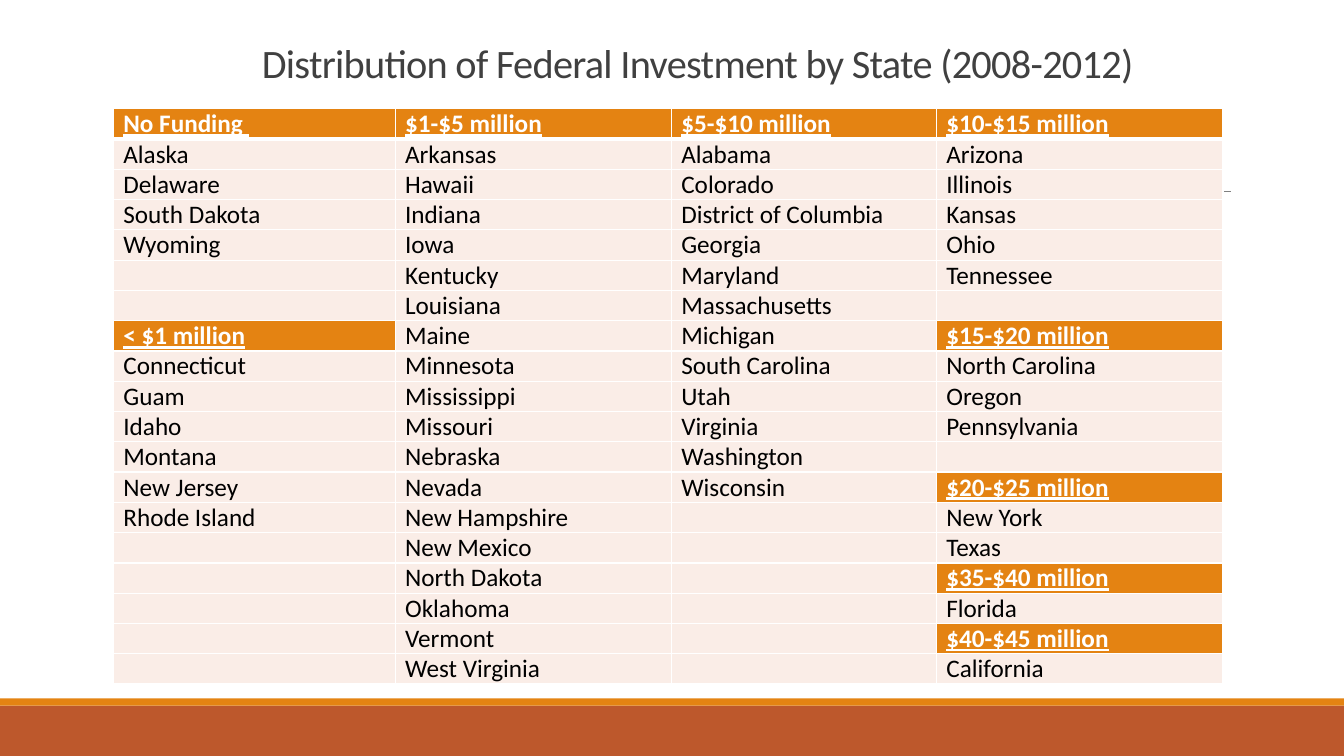
from lxml import etree
from pptx import Presentation
from pptx import util as u
from pptx.dml.color import RGBColor
from pptx.enum import shapes, text
from pptx.oxml import ns

WHITE = RGBColor(0xFF, 0xFF, 0xFF)
BLACK = RGBColor(0x00, 0x00, 0x00)
CHARCOAL = RGBColor(0x40, 0x40, 0x40)
GRAY = RGBColor(0x80, 0x80, 0x80)
ORANGE = RGBColor(0xE4, 0x83, 0x12)
RUST = RGBColor(0xBD, 0x58, 0x2C)
BLUSH = RGBColor(0xFA, 0xED, 0xE7)

PAGE_WIDTH, PAGE_HEIGHT = 33.87, 19.05
COLUMN_WIDTHS = [7.1, 6.96, 6.68, 7.22]
ROW_HEIGHT = 0.76
ROW_COUNT = 19

COLUMNS = [
    ["No Funding ", "Alaska", "Delaware", "South Dakota", "Wyoming", "", "",
     "< $1 million", "Connecticut", "Guam", "Idaho", "Montana", "New Jersey",
     "Rhode Island"],
    ["$1-$5 million", "Arkansas", "Hawaii", "Indiana", "Iowa", "Kentucky",
     "Louisiana", "Maine", "Minnesota", "Mississippi", "Missouri", "Nebraska",
     "Nevada", "New Hampshire", "New Mexico", "North Dakota", "Oklahoma",
     "Vermont", "West Virginia"],
    ["$5-$10 million", "Alabama", "Colorado", "District of Columbia", "Georgia",
     "Maryland", "Massachusetts", "Michigan", "South Carolina", "Utah",
     "Virginia", "Washington", "Wisconsin"],
    ["$10-$15 million", "Arizona", "Illinois", "Kansas", "Ohio", "Tennessee", "",
     "$15-$20 million", "North Carolina", "Oregon", "Pennsylvania", "",
     "$20-$25 million", "New York", "Texas", "$35-$40 million", "Florida",
     "$40-$45 million", "California"],
]


class FundingSlide:
    font_name = "Calibri"

    def __init__(self, page):
        self.page = page

    def style(self, para, size, color, heading=False):
        for span in para.runs:
            font = span.font
            font.name = self.font_name
            font.size = u.Pt(size)
            font.color.rgb = color
            font.bold = heading
            font.underline = heading

    def band(self, top, height, color):
        box = self.page.shapes.add_shape(
            shapes.MSO_SHAPE.RECTANGLE,
            0, u.Cm(top), u.Cm(PAGE_WIDTH), u.Cm(height))
        box.shadow.inherit = False
        box.fill.solid()
        box.fill.fore_color.rgb = color
        box.line.fill.background()

    def rule(self, left, right, top):
        line = self.page.shapes.add_connector(
            shapes.MSO_CONNECTOR.STRAIGHT,
            u.Cm(left), u.Cm(top), u.Cm(right), u.Cm(top))
        line.line.color.rgb = GRAY
        line.line.width = u.Pt(0.5)
        etree.SubElement(line._element.spPr, ns.qn("a:effectLst"))

    def title(self, wording, left, top, width, height):
        box = self.page.shapes.add_textbox(
            u.Cm(left), u.Cm(top), u.Cm(width), u.Cm(height))
        frame = box.text_frame
        frame.word_wrap = True
        frame.vertical_anchor = text.MSO_ANCHOR.BOTTOM
        frame.text = wording
        para = frame.paragraphs[0]
        para.line_spacing = 0.85
        self.style(para, 28.8, CHARCOAL)
        para.runs[0].font._element.set("spc", "-50")

    def borders(self, cell, row):
        properties = cell._tc.get_or_add_tcPr()
        widths = {"L": 1, "R": 1,
                  "T": 3 if row == 1 else 1, "B": 3 if row == 0 else 1}
        for side, width in widths.items():
            line = etree.SubElement(properties, ns.qn(f"a:ln{side}"), w=str(u.Pt(width)))
            fill = etree.SubElement(line, ns.qn("a:solidFill"))
            etree.SubElement(fill, ns.qn("a:srgbClr"), val=str(WHITE))

    def cell(self, cell, wording, row):
        heading = "million" in wording or row == 0
        self.borders(cell, row)
        cell.fill.solid()
        cell.fill.fore_color.rgb = ORANGE if heading else BLUSH
        cell.margin_left = u.Cm(0.25)
        cell.margin_right = cell.margin_top = cell.margin_bottom = 0
        cell.vertical_anchor = text.MSO_ANCHOR.MIDDLE
        if wording:
            cell.text_frame.text = wording
            self.style(cell.text_frame.paragraphs[0], 18,
                       WHITE if heading else BLACK, heading)

    def table(self, left, top):
        frame = self.page.shapes.add_table(
            ROW_COUNT, len(COLUMNS), u.Cm(left), u.Cm(top),
            u.Cm(sum(COLUMN_WIDTHS)), u.Cm(ROW_HEIGHT * ROW_COUNT))
        table = frame.table
        table.first_row = table.horz_banding = False
        for row in table.rows:
            row.height = u.Cm(ROW_HEIGHT)
        for index, (width, states) in enumerate(zip(COLUMN_WIDTHS, COLUMNS)):
            table.columns[index].width = u.Cm(width)
            padded = states + [""] * (ROW_COUNT - len(states))
            for row, wording in enumerate(padded):
                self.cell(table.cell(row, index), wording, row)


def main():
    deck = Presentation()
    deck.slide_width = u.Cm(PAGE_WIDTH)
    deck.slide_height = u.Cm(PAGE_HEIGHT)
    slide = FundingSlide(deck.slides.add_slide(deck.slide_layouts[6]))
    slide.band(17.78, 1.27, RUST)
    slide.band(17.6, 0.18, ORANGE)
    slide.rule(3.33, 31.01, 4.83)
    slide.title("Distribution of Federal Investment by State (2008-2012)",
                6.35, 0, 22.86, 2.31)
    slide.table(2.86, 2.74)
    deck.save("out.pptx")


if __name__ == "__main__":
    main()
